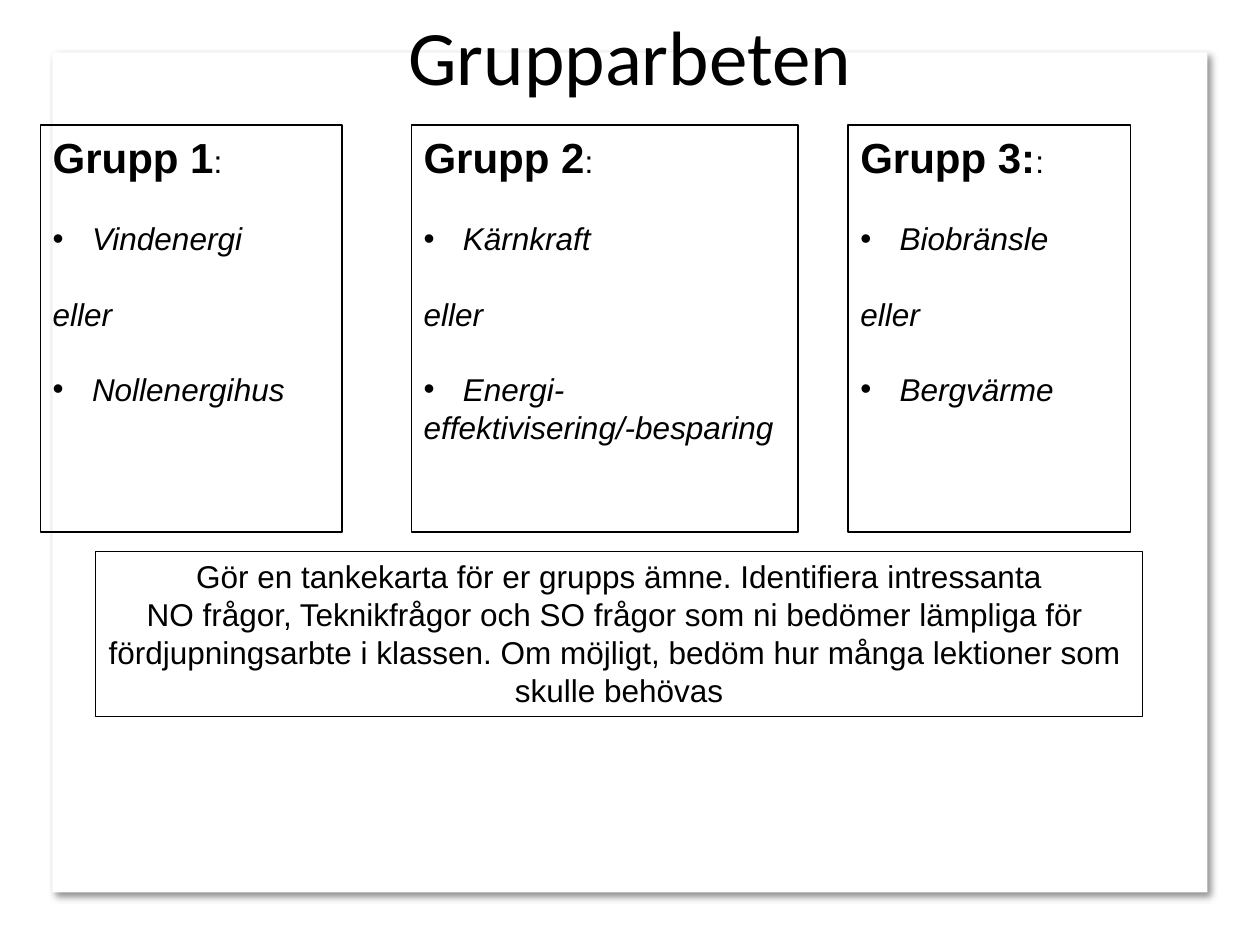
from dataclasses import dataclass

from lxml.etree import SubElement
from pptx import Presentation
from pptx.dml.color import RGBColor
from pptx.enum.shapes import MSO_SHAPE
from pptx.enum.text import MSO_ANCHOR, PP_ALIGN
from pptx.oxml.ns import qn
from pptx.util import Pt


@dataclass(frozen=True)
class Theme:
    ink: RGBColor = RGBColor(0, 0, 0)
    paper: RGBColor = RGBColor(255, 255, 255)
    title_font: str = "Calibri"
    body_font: str = "Arial"
    title_size: float = 44
    heading_size: float = 24
    body_size: float = 18
    border: float = 0.75
    indent: float = 22.5
    gap: float = 21.5


THEME = Theme()

GROUPS = [
    ((23, 71.5, 172.5, 232.5), "Grupp 1", ["Vindenergi"], ["Nollenergihus"]),
    ((235, 71.5, 221, 232.5), "Grupp 2", ["Kärnkraft"],
     ["Energi-", "effektivisering/-besparing"]),
    ((484.5, 71.5, 161.5, 232.5), "Grupp 3:", ["Biobränsle"], ["Bergvärme"]),
]

TASK_LINES = [
    "Gör en tankekarta för er grupps ämne. Identifiera intressanta",
    "NO frågor, Teknikfrågor och SO frågor som ni bedömer lämpliga för ",
    "fördjupningsarbte i klassen. Om möjligt, bedöm hur många lektioner som ",
    "skulle behövas",
]


def style(span, size, font=THEME.body_font, bold=False, italic=False):
    span.font.name = font
    span.font.size = Pt(size)
    span.font.bold = bold
    span.font.italic = italic
    span.font.color.rgb = THEME.ink


def add_bullet(para):
    properties = para._p.get_or_add_pPr()
    properties.set("marL", str(Pt(THEME.indent)))
    properties.set("indent", str(-Pt(THEME.indent)))
    SubElement(properties, qn("a:buFont"), typeface=THEME.body_font)
    SubElement(properties, qn("a:buChar"), char="•")


def add_rectangle(page, bounds):
    box = page.shapes.add_shape(MSO_SHAPE.RECTANGLE, *map(Pt, bounds))
    box.shadow.inherit = False
    return box


def add_frame(page, bounds):
    box = add_rectangle(page, bounds)
    box.fill.background()
    box.line.color.rgb = THEME.ink
    box.line.width = Pt(THEME.border)
    frame = box.text_frame
    frame.word_wrap = True
    frame.vertical_anchor = MSO_ANCHOR.TOP
    return frame


def add_panel(page, bounds):
    panel = add_rectangle(page, bounds)
    panel.fill.solid()
    panel.fill.fore_color.rgb = THEME.paper
    panel.line.fill.background()
    effects = panel._element.spPr.find(qn("a:effectLst"))
    shadow = SubElement(effects, qn("a:outerShdw"), blurRad=str(Pt(4)),
                        dist=str(Pt(3)), dir="2700000", algn="tl", rotWithShape="0")
    color = SubElement(shadow, qn("a:srgbClr"), val=str(THEME.ink))
    SubElement(color, qn("a:alpha"), val="43000")


def add_title(page, bounds, text):
    frame = page.shapes.add_textbox(*map(Pt, bounds)).text_frame
    frame.word_wrap = True
    frame.vertical_anchor = MSO_ANCHOR.MIDDLE
    frame.text = text
    para = frame.paragraphs[0]
    para.alignment = PP_ALIGN.CENTER
    style(para.runs[0], THEME.title_size, THEME.title_font)


def add_group(page, bounds, name, first_topic, second_topic):
    frame = add_frame(page, bounds)
    heading = frame.paragraphs[0]
    heading.alignment = PP_ALIGN.LEFT
    for text, size, bold in ((name, THEME.heading_size, True),
                             (":", THEME.body_size, False)):
        span = heading.add_run()
        span.text = text
        style(span, size, bold=bold)
    for lines, bulleted in ((first_topic, True), (["eller"], False),
                            (second_topic, True)):
        for number, line in enumerate(lines):
            para = frame.add_paragraph()
            para.text = line
            para.alignment = PP_ALIGN.LEFT
            if number == 0:
                para.space_before = Pt(THEME.gap)
                if bulleted:
                    add_bullet(para)
            style(para.runs[0], THEME.body_size, italic=True)


def add_task(page, bounds, lines):
    frame = add_frame(page, bounds)
    frame.word_wrap = False
    frame.text = "\n".join(lines)
    for para in frame.paragraphs:
        para.alignment = PP_ALIGN.CENTER
        style(para.runs[0], THEME.body_size)


def main():
    deck = Presentation()
    deck.slide_width, deck.slide_height = Pt(720), Pt(540)
    page = deck.slides.add_slide(deck.slide_layouts[6])
    add_panel(page, (30, 30, 660, 480))
    add_title(page, (36, -13.5, 648, 90), "Grupparbeten")
    for group in GROUPS:
        add_group(page, *group)
    add_task(page, (54.5, 315, 598.5, 94.5), TASK_LINES)
    deck.save("out.pptx")


if __name__ == "__main__":
    main()
